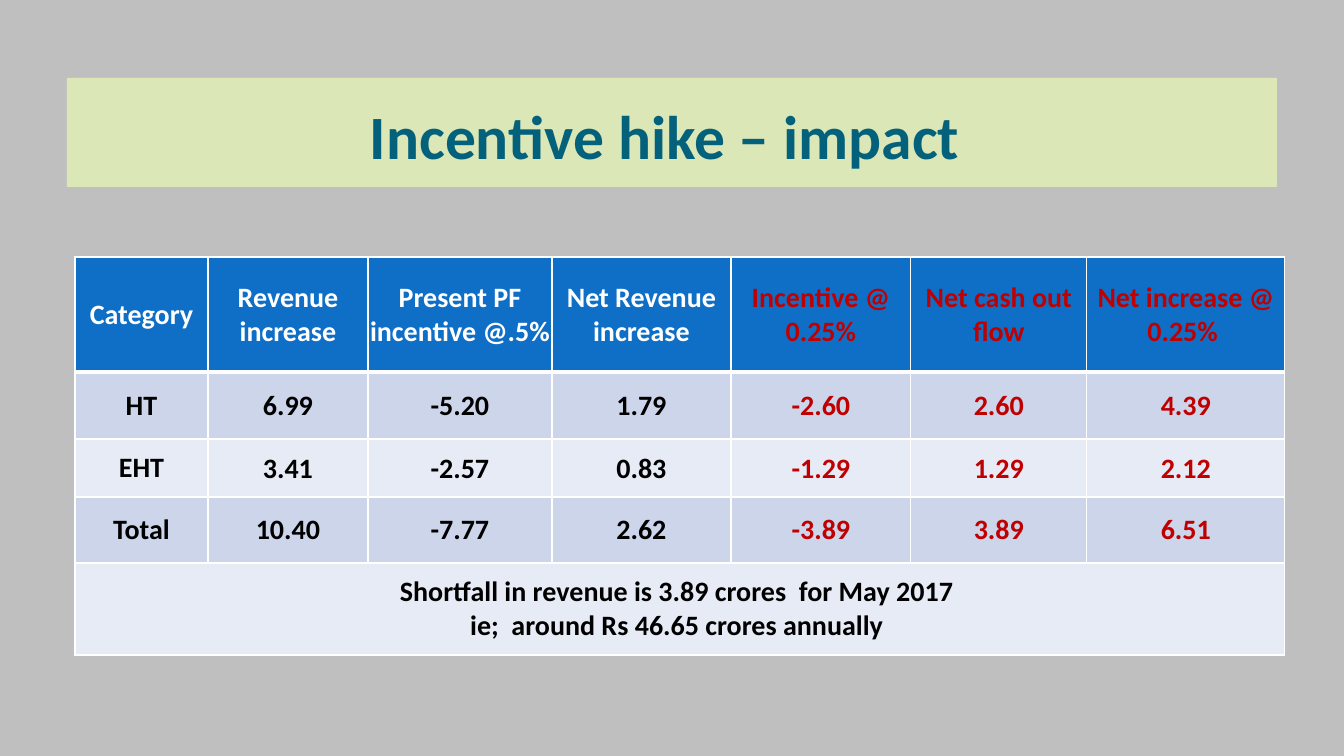
import pptx
import pptx.dml.color
import pptx.enum.text
import pptx.util
from lxml import etree
from pptx.oxml import ns

RGB = pptx.dml.color.RGBColor
GREY = RGB(0xBF, 0xBF, 0xBF)
LIME = RGB(0xDB, 0xE7, 0xB6)
TEAL = RGB(0x04, 0x61, 0x7B)
BLUE = RGB(0x0F, 0x6F, 0xC6)
WHITE = RGB(0xFF, 0xFF, 0xFF)
BLACK = RGB(0, 0, 0)
RED = RGB(0xC0, 0, 0)
BANDS = (RGB(0xE7, 0xEB, 0xF5), RGB(0xCC, 0xD5, 0xEA))

FONT = "Calibri"
MIDDLE = pptx.enum.text.MSO_ANCHOR.MIDDLE
CENTER = pptx.enum.text.PP_ALIGN.CENTER

WIDTHS = (133, 160, 184, 179, 180, 176, 198)
HEIGHTS = (115, 67, 58, 66, 92)
FIRST_RED = 4
ROWS = (
    ("Category", "Revenue increase", "Present PF incentive @.5%",
     "Net Revenue increase", "Incentive @ 0.25%", "Net cash out flow",
     "Net increase @ 0.25% "),
    ("HT", "6.99", "-5.20", "1.79", "-2.60", "2.60", "4.39"),
    ("EHT", "3.41", "-2.57", "0.83", "-1.29", "1.29", "2.12"),
    ("Total", "10.40", "-7.77", "2.62", "-3.89", "3.89", "6.51"),
    ("Shortfall in revenue is 3.89 crores  for May 2017 \n"
     "ie;  around Rs 46.65 crores annually ",) + ("",) * 6,
)


def px(n):
    return pptx.util.Emu(round(n * 914400 / 100.8))


def style(frame, size, color):
    for para in frame.paragraphs:
        para.alignment = CENTER
        for run in para.runs:
            font = run.font
            font.name, font.size, font.bold = FONT, pptx.util.Pt(size), True
            font.color.rgb = color


def margins(box, left, top, right, bottom):
    box.margin_left, box.margin_top = px(left), px(top)
    box.margin_right, box.margin_bottom = px(right), px(bottom)


def add_title(slide, text):
    title = slide.shapes.title
    title.left, title.top, title.width, title.height = map(px, (67, 78, 1210, 109))
    title.fill.solid()
    title.fill.fore_color.rgb = LIME
    frame = title.text_frame
    frame.text = text
    frame.auto_size = pptx.enum.text.MSO_AUTO_SIZE.NONE
    frame.vertical_anchor = MIDDLE
    margins(frame, 0, 5, 0, 0)
    style(frame, 44, TEAL)


def add_edges(cell, row):
    """Draw white cell borders, thick between the header and the body."""
    props = cell._tc.get_or_add_tcPr()
    for side in "LRTB":
        thick = (row, side) in ((0, "B"), (1, "T"))
        line = etree.SubElement(props, ns.qn("a:ln" + side),
                                w=str(pptx.util.Pt(3 if thick else 1)))
        fill = etree.SubElement(line, ns.qn("a:solidFill"))
        etree.SubElement(fill, ns.qn("a:srgbClr"), val=str(WHITE))


def fill_cell(cell, row, col, text):
    add_edges(cell, row)
    cell.fill.solid()
    cell.fill.fore_color.rgb = BANDS[row % 2] if row else BLUE
    cell.vertical_anchor = MIDDLE
    if row == 0 or col > 0:
        margins(cell, 1, 1, 1, 0)
    cell.text_frame.text = text
    color = RED if col >= FIRST_RED else BLACK if row else WHITE
    style(cell.text_frame, 20, color)


def add_table(slide):
    place = map(px, (75, 257, sum(WIDTHS), sum(HEIGHTS)))
    table = slide.shapes.add_table(len(ROWS), len(WIDTHS), *place).table
    for col, width in zip(table.columns, WIDTHS):
        col.width = px(width)
    for row, height in zip(table.rows, HEIGHTS):
        row.height = px(height)
    for r, texts in enumerate(ROWS):
        for c, text in enumerate(texts):
            fill_cell(table.cell(r, c), r, c, text)
    last = len(ROWS) - 1
    table.cell(last, 0).merge(table.cell(last, len(WIDTHS) - 1))


def main():
    deck = pptx.Presentation()
    deck.slide_width, deck.slide_height = px(1344), px(756)
    slide = deck.slides.add_slide(deck.slide_layouts[5])
    back = slide.background.fill
    back.solid()
    back.fore_color.rgb = GREY
    add_title(slide, "Incentive hike – impact ")
    add_table(slide)
    deck.save("out.pptx")


if __name__ == "__main__":
    main()
